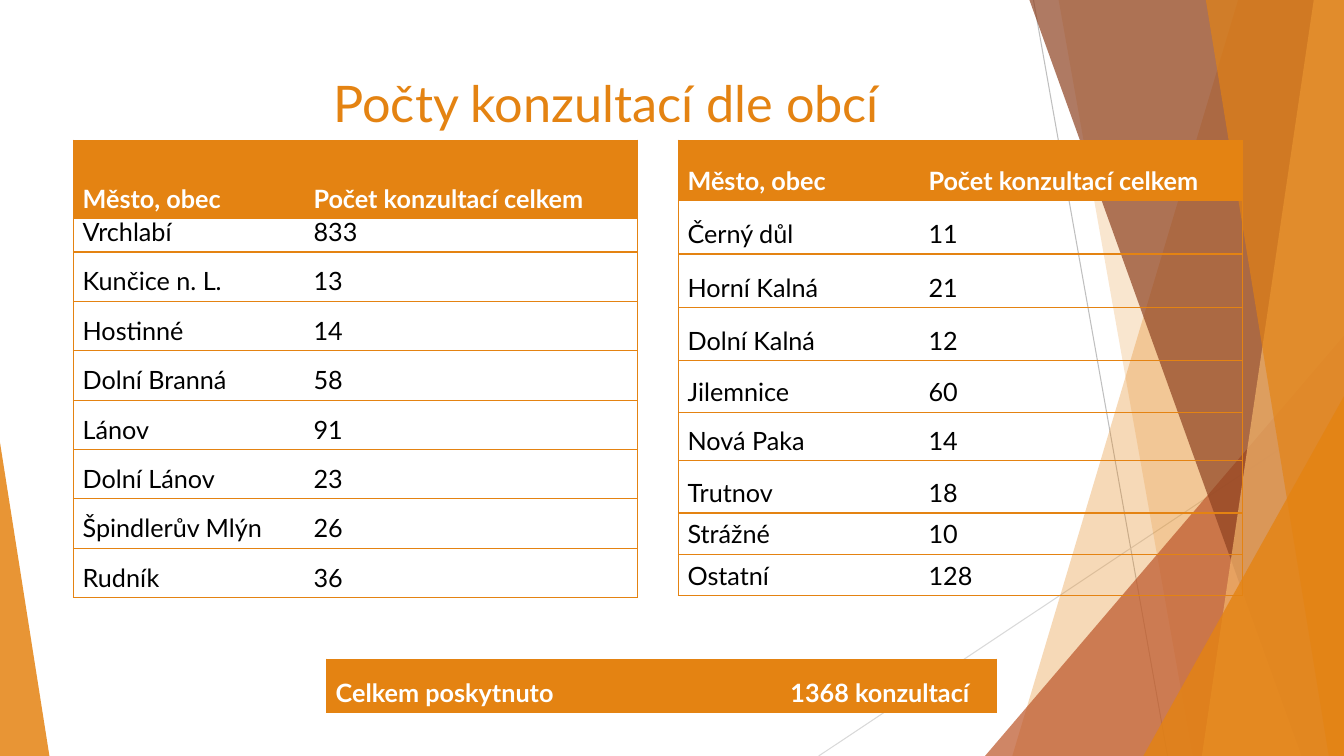
from dataclasses import dataclass

from lxml import etree
from pptx import Presentation
from pptx import util as u
from pptx.dml.color import RGBColor
from pptx.enum import shapes, text
from pptx.oxml.ns import qn
from pptx.slide import Slide

Point = tuple[float, float]
NO_STYLE = "{2D5ABB26-0587-4C30-8999-92F81FD0307C}"
WIDTH, HEIGHT = 13.33, 7.5


@dataclass(frozen=True)
class Theme:
    font: str = "Lato"
    orange: str = "E48312"
    rust: str = "BD582C"
    brown: str = "8E4221"
    peach: str = "F3B56C"
    white: str = "FFFFFF"
    black: str = "000000"
    title_size: float = 36
    table_size: float = 18
    line_spacing: float = 10


@dataclass(frozen=True)
class Ray:
    start: Point
    end: Point
    color: str


@dataclass(frozen=True)
class Facet:
    top_left: float
    bottom_left: float
    color: str
    alpha: int


@dataclass(frozen=True)
class Corner:
    left: float
    top: float
    width: float
    apex: float
    color: str
    alpha: int


@dataclass(frozen=True)
class Grid:
    left: float
    top: float
    cols: list[float]
    heights: list[float]
    rows: list[tuple[str, str]]


T = Theme()
HEADER = ("Město, obec", "Počet konzultací celkem")

RAYS = [
    Ray((10.25, 0), (11.58, HEIGHT), "BFBFBF"),
    Ray((WIDTH, 4.03), (8.12, HEIGHT), "D9D9D9"),
]
DECOR = [
    Facet(12.28, 10.04, T.orange, 30),
    Facet(10.5, 11.83, T.orange, 20),
    Corner(9.77, 3.33, 3.56, 1, T.rust, 72),
    Facet(10.21, 12.91, T.brown, 70),
    Facet(13.03, 11.92, T.peach, 70),
    Facet(11.96, 13.18, T.orange, 65),
    Corner(11.34, 3.93, 1.99, 1, T.orange, 80),
    Corner(0, 4.39, 0.49, 0, T.orange, 85),
]
GRIDS = [
    Grid(0.73, 1.39, [2.29, 3.3], [0.78, 0.33] + [0.49] * 7, [
        HEADER, ("Vrchlabí", "833"), ("Kunčice n. L.", "13"),
        ("Hostinné", "14"), ("Dolní Branná", "58"), ("Lánov", "91"),
        ("Dolní Lánov", "23"), ("Špindlerův Mlýn", "26"), ("Rudník", "36"),
    ]),
    Grid(6.73, 1.39, [2.39, 3.2],
         [0.6, 0.53, 0.53, 0.53, 0.51, 0.48, 0.52, 0.41, 0.41], [
        HEADER, ("Černý důl", "11"), ("Horní Kalná", "21"),
        ("Dolní Kalná", "12"), ("Jilemnice", "60"), ("Nová Paka", "14"),
        ("Trutnov", "18"), ("Strážné", "10"), ("Ostatní", "128"),
    ]),
    Grid(3.24, 6.54, [4.51, 2.13], [0.53],
         [("Celkem poskytnuto", "1368 konzultací")]),
]


def rgb(color: str) -> RGBColor:
    return RGBColor.from_string(color)


def add_run(p, wording: str, size: float, color: str, bold: bool = False) -> None:
    r = p.add_run()
    r.text = wording
    r.font.name = T.font
    r.font.size = u.Pt(size)
    r.font.bold = bold
    r.font.color.rgb = rgb(color)


def paint(sp, color: str, alpha: int) -> None:
    sp.shadow.inherit = False
    sp.fill.solid()
    sp.fill.fore_color.rgb = rgb(color)
    sp.line.fill.background()
    clr = next(sp.element.spPr.iter(qn("a:srgbClr")))
    etree.SubElement(clr, qn("a:alpha"), val=str(alpha * 1000))


def draw_ray(s: Slide, ray: Ray) -> None:
    ends = [u.Inches(v) for v in (*ray.start, *ray.end)]
    cx = s.shapes.add_connector(shapes.MSO_CONNECTOR.STRAIGHT, *ends)
    cx.line.color.rgb = rgb(ray.color)
    cx.line.width = u.Pt(0.75)
    etree.SubElement(cx.element.spPr, qn("a:effectLst"))


def draw_facet(s: Slide, facet: Facet) -> None:
    corners = [(facet.top_left, 0), (WIDTH, 0), (WIDTH, HEIGHT),
               (facet.bottom_left, HEIGHT)]
    points = [(u.Inches(x), u.Inches(y)) for x, y in corners]
    builder = s.shapes.build_freeform(*points[0])
    builder.add_line_segments(points[1:], close=True)
    paint(builder.convert_to_shape(), facet.color, facet.alpha)


def draw_corner(s: Slide, corner: Corner) -> None:
    sp = s.shapes.add_shape(
        shapes.MSO_SHAPE.ISOSCELES_TRIANGLE, u.Inches(corner.left),
        u.Inches(corner.top), u.Inches(corner.width),
        u.Inches(HEIGHT - corner.top))
    sp.adjustments[0] = corner.apex
    paint(sp, corner.color, corner.alpha)


def add_borders(cell, sides: list[str]) -> None:
    tc_pr = cell.fill and cell._tc.get_or_add_tcPr()
    for i, side in enumerate(sides):
        ln = etree.Element(qn(f"a:ln{side}"), w=str(u.Pt(1)))
        fill = etree.SubElement(ln, qn("a:solidFill"))
        etree.SubElement(fill, qn("a:srgbClr"), val=T.orange)
        tc_pr.insert(i, ln)


def draw_grid(s: Slide, grid: Grid) -> None:
    frame = s.shapes.add_table(
        len(grid.rows), len(grid.cols), u.Inches(grid.left), u.Inches(grid.top),
        u.Inches(sum(grid.cols)), u.Inches(sum(grid.heights)))
    tbl = frame.table
    tbl.horz_banding = False
    next(frame.element.iter(qn("a:tableStyleId"))).text = NO_STYLE
    for col, width in zip(tbl.columns, grid.cols):
        col.width = u.Inches(width)
    for i, (height, row) in enumerate(zip(grid.heights, grid.rows)):
        tbl.rows[i].height = u.Inches(height)
        for j, wording in enumerate(row):
            cell = tbl.cell(i, j)
            cell.vertical_anchor = text.MSO_ANCHOR.BOTTOM
            cell.margin_left = cell.margin_right = u.Inches(0.09)
            cell.margin_top = cell.margin_bottom = u.Inches(0.05)
            if i == 0:
                cell.fill.solid()
                cell.fill.fore_color.rgb = rgb(T.orange)
            else:
                cell.fill.background()
            add_borders(cell, ["R" if j else "L", "T", "B"])
            p = cell.text_frame.paragraphs[0]
            p.line_spacing = u.Pt(T.line_spacing)
            add_run(p, wording, T.table_size, T.black if i else T.white, i == 0)


def place_title(s: Slide, wording: str) -> None:
    sp = s.shapes.title
    sp.left, sp.top = u.Inches(1.2), u.Inches(0.67)
    sp.width, sp.height = u.Inches(9.63), u.Inches(1.44)
    tf = sp.text_frame
    tf.vertical_anchor = text.MSO_ANCHOR.TOP
    p = tf.paragraphs[0]
    p.alignment = text.PP_ALIGN.CENTER
    add_run(p, wording, T.title_size, T.orange)
    sp.element.getparent().append(sp.element)


def main() -> None:
    prs = Presentation()
    prs.slide_width, prs.slide_height = u.Inches(WIDTH), u.Inches(HEIGHT)
    s = prs.slides.add_slide(prs.slide_layouts[5])
    for ray in RAYS:
        draw_ray(s, ray)
    for part in DECOR:
        if isinstance(part, Facet):
            draw_facet(s, part)
        else:
            draw_corner(s, part)
    place_title(s, "Počty konzultací dle obcí")
    for grid in GRIDS:
        draw_grid(s, grid)
    prs.save("out.pptx")


if __name__ == "__main__":
    main()
